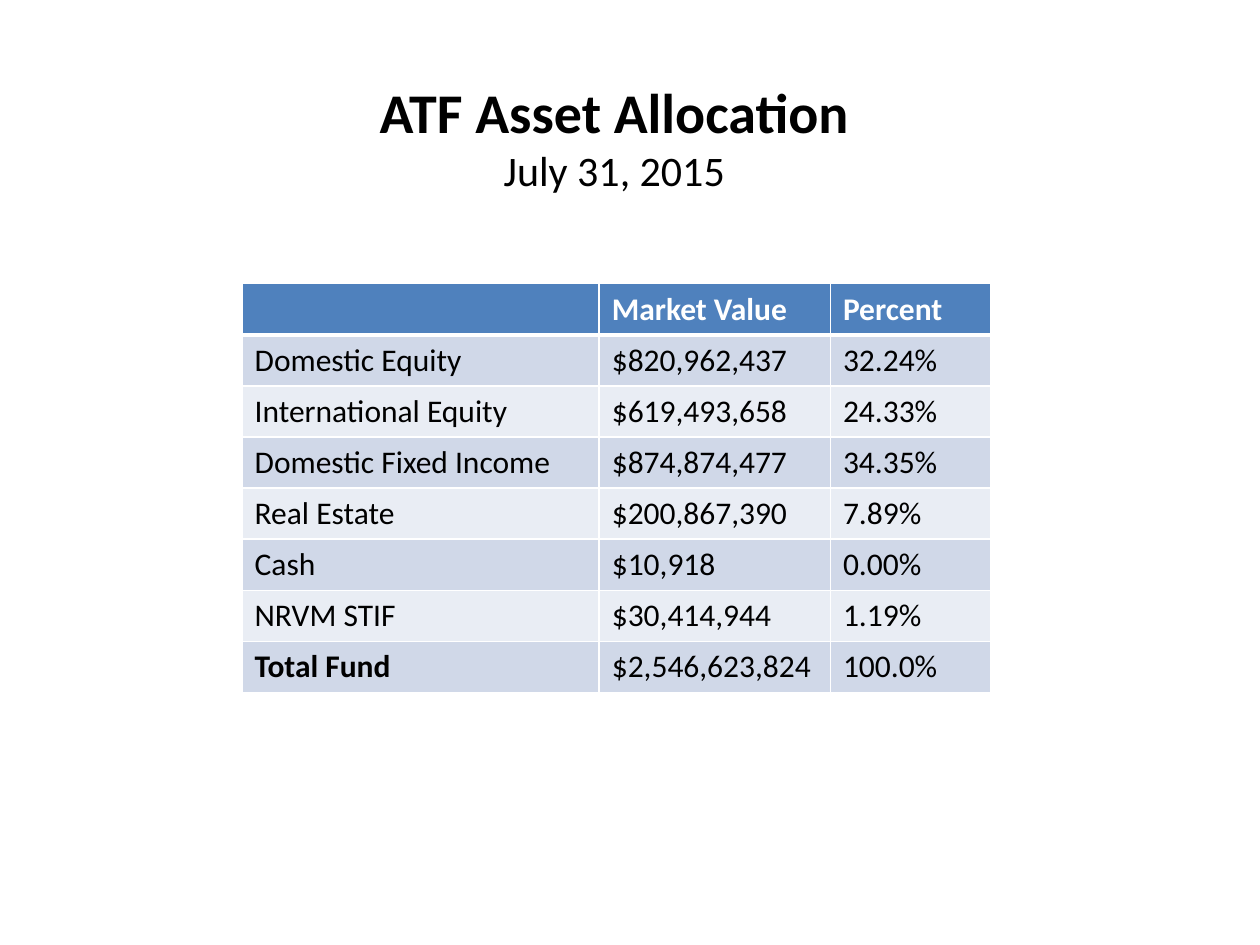
from copy import deepcopy
from dataclasses import dataclass

from lxml import etree
from pptx import Presentation
from pptx.dml.color import RGBColor
from pptx.enum.text import MSO_ANCHOR, PP_ALIGN
from pptx.oxml.ns import qn
from pptx.util import Cm, Pt

MIDDLE = MSO_ANCHOR.MIDDLE
CENTER = PP_ALIGN.CENTER
TITLE_ONLY = 5

HEADINGS = ("", "Market Value", "Percent")
ALLOCATIONS = (
    ("Domestic Equity", "$820,962,437", "32.24%"),
    ("International Equity", "$619,493,658", "24.33%"),
    ("Domestic Fixed Income", "$874,874,477", "34.35%"),
    ("Real Estate", "$200,867,390", "7.89%"),
    ("Cash", "$10,918", "0.00%"),
    ("NRVM STIF", "$30,414,944", "1.19%"),
    ("Total Fund", "$2,546,623,824", "100.0%"),
)


@dataclass(frozen=True)
class Theme:
    font: str = "Calibri"
    title_size: int = 32
    subtitle_size: int = 24
    table_size: int = 18
    text: str = "000000"
    header_text: str = "FFFFFF"
    header_fill: str = "4F81BD"
    bands: tuple = ("D0D8E8", "E9EDF4")
    border: str = "FFFFFF"
    thin: int = 1
    thick: int = 3


class SlideBuilder:
    def __init__(self, slide, theme):
        self.slide = slide
        self.theme = theme

    def format_run(self, run, size, color, bold=False):
        run.font.name = self.theme.font
        run.font.size = Pt(size)
        run.font.bold = bold
        run.font.color.rgb = RGBColor.from_string(color)

    def add_title(self, title, subtitle, left, top, width, height):
        """Fill the title placeholder with two lines of one paragraph."""
        shape = self.slide.shapes.title
        shape.left, shape.top, shape.width, shape.height = left, top, width, height
        shape.text_frame.vertical_anchor = MIDDLE
        paragraph = shape.text_frame.paragraphs[0]
        paragraph.text = f"{title}\v{subtitle}"
        paragraph.alignment = CENTER
        title_run, subtitle_run = paragraph.runs
        self.format_run(title_run, self.theme.title_size, self.theme.text, bold=True)
        self.format_run(subtitle_run, self.theme.subtitle_size, self.theme.text)
        # The line break takes the title's size, so the first line keeps its height.
        line_break = paragraph._p.find(qn("a:br"))
        line_break.append(deepcopy(title_run._r.find(qn("a:rPr"))))

    def set_borders(self, cell, top, bottom):
        """Draw all four cell borders; top and bottom are widths in points."""
        properties = cell._tc.get_or_add_tcPr()
        widths = {"L": self.theme.thin, "R": self.theme.thin, "T": top, "B": bottom}
        for position, (side, width) in enumerate(widths.items()):
            line = etree.Element(qn(f"a:ln{side}"), w=str(Pt(width)))
            fill = etree.SubElement(line, qn("a:solidFill"))
            etree.SubElement(fill, qn("a:srgbClr"), val=self.theme.border)
            properties.insert(position, line)

    def format_cell(self, cell, text, fill, color, bold):
        cell.text = text
        for run in cell.text_frame.paragraphs[0].runs:
            self.format_run(run, self.theme.table_size, color, bold)
        cell.fill.solid()
        cell.fill.fore_color.rgb = RGBColor.from_string(fill)

    def add_table(self, rows, left, top, column_widths, row_height):
        """Add a table with a header row, banded rows and a bold last label."""
        theme = self.theme
        table = self.slide.shapes.add_table(
            len(rows), len(column_widths), left, top,
            sum(column_widths), row_height * len(rows),
        ).table
        for column, width in zip(table.columns, column_widths):
            column.width = width
        last = len(rows) - 1
        for row_index, values in enumerate(rows):
            table.rows[row_index].height = row_height
            header = row_index == 0
            fill = theme.header_fill if header else theme.bands[(row_index - 1) % 2]
            color = theme.header_text if header else theme.text
            for column_index, value in enumerate(values):
                cell = table.cell(row_index, column_index)
                bold = header or (row_index == last and column_index == 0)
                self.format_cell(cell, value, fill, color, bold)
                self.set_borders(
                    cell,
                    top=theme.thick if row_index == 1 else theme.thin,
                    bottom=theme.thick if header else theme.thin,
                )


def main():
    presentation = Presentation()
    presentation.slide_width = Cm(25.4)
    presentation.slide_height = Cm(19.05)
    slide = presentation.slides.add_slide(presentation.slide_layouts[TITLE_ONLY])
    builder = SlideBuilder(slide, Theme())
    builder.add_title(
        "ATF Asset Allocation", "July 31, 2015",
        Cm(2.12), Cm(1.27), Cm(20.53), Cm(2.96),
    )
    builder.add_table(
        (HEADINGS, *ALLOCATIONS), Cm(4.88), Cm(5.72),
        (Cm(7.2), Cm(4.66), Cm(3.23)), Cm(1.03),
    )
    presentation.save("out.pptx")


if __name__ == "__main__":
    main()
